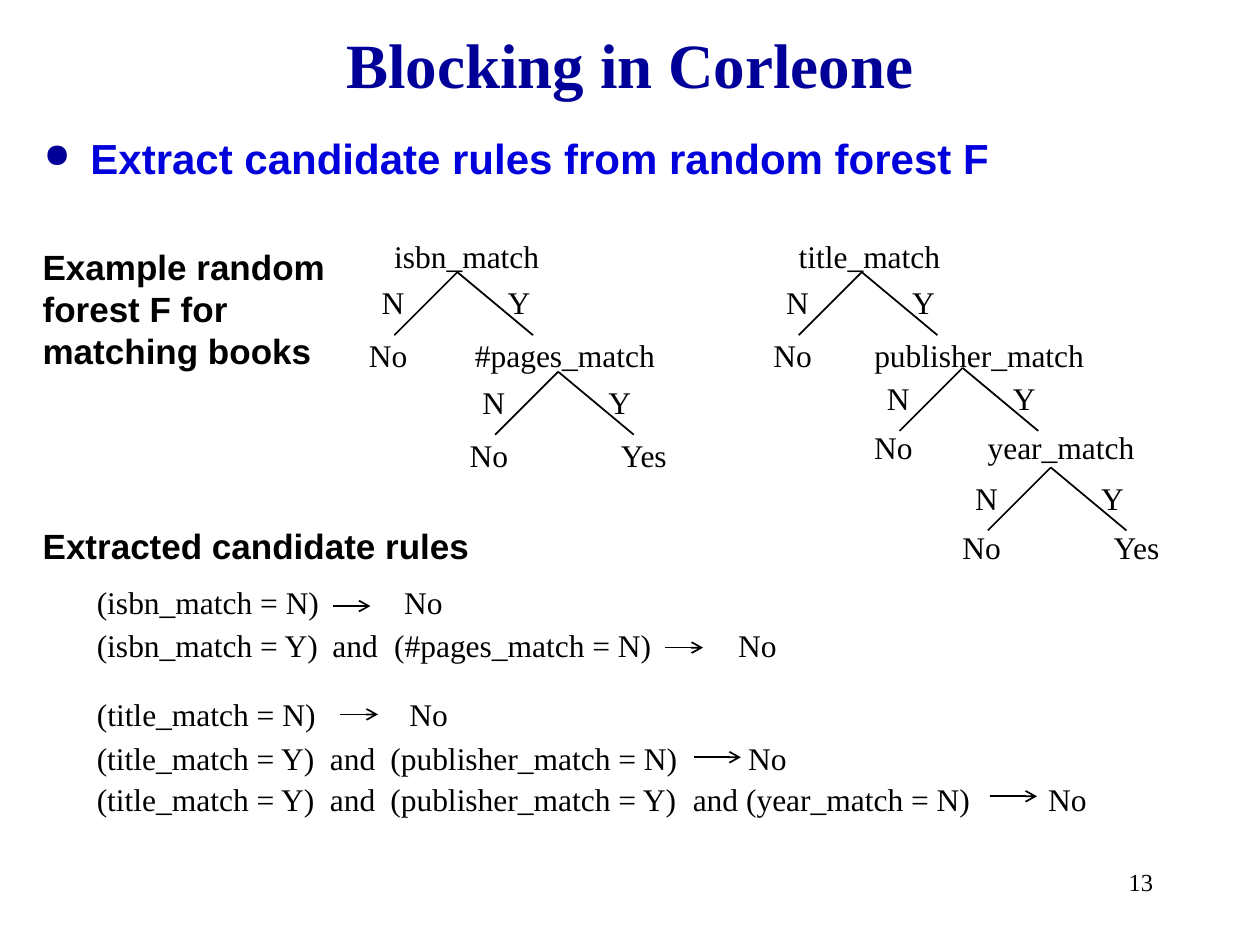
from collections import namedtuple

from lxml import etree
from pptx import Presentation
from pptx.dml.color import RGBColor
from pptx.enum.shapes import MSO_CONNECTOR
from pptx.enum.text import MSO_ANCHOR, PP_ALIGN
from pptx.oxml.ns import qn
from pptx.util import Inches, Pt

BLACK = RGBColor(0x00, 0x00, 0x00)
NAVY = RGBColor(0x00, 0x00, 0x99)
BLUE = RGBColor(0x00, 0x00, 0xDC)
SERIF, SANS = "Times New Roman", "Arial"

# A tree node: its label box, the apex of its two branches, the top of its children
Split = namedtuple("Split", "label left top width apex_x apex_y child_top")
ISBN_TREE = [
    Split("isbn_match", 3.03, 1.83, 1.4, 3.63, 2.16, 2.62),
    Split("#pages_match", 3.67, 2.62, 1.78, 4.43, 2.95, 3.41),
]
TITLE_TREE = [
    Split("title_match", 6.24, 1.83, 1.4, 6.84, 2.16, 2.62),
    Split("publisher_match", 6.84, 2.62, 1.99, 7.64, 2.92, 3.35),
    Split("year_match", 7.74, 3.35, 1.43, 8.34, 3.71, 4.14),
]

# A rule: its terms, the x where each term after the first starts, and its arrow
Rule = namedtuple("Rule", "top width terms term_xs arrow_x arrow_y arrow_length")
RULE_LEFT, INSET = 0.67, 0.1
RULES = [
    Rule(4.58, 3, ["(isbn_match = N)", "No"], [3.21], 2.64, 4.81, 0.3),
    Rule(4.92, 5.67, ["(isbn_match = Y)", "and", "(#pages_match = N)", "No"],
         [2.64, 3.13, 5.86], 5.28, 5.14, 0.3),
    Rule(5.47, 3.08, ["(title_match = N)", "No"], [3.25], 2.7, 5.67, 0.3),
    Rule(5.82, 6, ["(title_match = Y)", "and", "(publisher_match = N)", "No"],
         [2.62, 3.1, 5.94], 5.51, 6.01, 0.37),
    Rule(6.14, 8.17,
         ["(title_match = Y)", "and", "(publisher_match = Y)",
          "and (year_match = N)", "No"],
         [2.62, 3.1, 5.5, 8.32], 7.86, 6.32, 0.37),
]


def add_text(shapes, text, left, top, width, height=0.4, size=18, font=SERIF,
             color=BLACK, bold=False, align=PP_ALIGN.LEFT, wrap=True):
    """Add a text box; a newline in text starts a new line. Return its frame."""
    box = shapes.add_textbox(Inches(left), Inches(top), Inches(width), Inches(height))
    frame = box.text_frame
    frame.word_wrap = wrap
    paragraph = frame.paragraphs[0]
    paragraph.alignment = align
    for number, line in enumerate(text.split("\n")):
        if number:
            paragraph.add_line_break()
        run = paragraph.add_run()
        run.text = line
        run.font.size = Pt(size)
        run.font.name = font
        run.font.bold = bold
        run.font.color.rgb = color
    return frame


def add_line(shapes, x1, y1, x2, y2, arrow=False):
    line = shapes.add_connector(
        MSO_CONNECTOR.STRAIGHT, Inches(x1), Inches(y1), Inches(x2), Inches(y2))
    line.line.color.rgb = BLACK
    line.line.width = Pt(1)
    props = line._element.spPr
    if arrow:
        etree.SubElement(props.find(qn("a:ln")), qn("a:tailEnd"), type="arrow")
    etree.SubElement(props, qn("a:effectLst"))


def add_bullet(paragraph, indent):
    paragraph.space_before = Pt(4.8)
    props = paragraph._p.get_or_add_pPr()
    props.set("marL", str(Inches(indent)))
    props.set("indent", str(-Inches(indent)))
    color = etree.SubElement(props, qn("a:buClr"))
    etree.SubElement(color, qn("a:srgbClr"), val=str(NAVY))
    etree.SubElement(props, qn("a:buSzPct"), val="80000")
    etree.SubElement(props, qn("a:buChar"), char="●")


def add_tab_stops(paragraph, positions):
    tabs = etree.SubElement(paragraph._p.get_or_add_pPr(), qn("a:tabLst"))
    for position in positions:
        etree.SubElement(tabs, qn("a:tab"), pos=str(Inches(position)), algn="l")


def add_tree(slide, splits):
    """Draw a decision tree whose every N branch ends in No."""
    shapes = slide.shapes.add_group_shape().shapes
    for split in splits:
        x, y = split.apex_x, split.apex_y
        add_text(shapes, split.label, split.left, split.top, split.width)
        add_line(shapes, x, y, x - 0.5, y + 0.5)
        add_line(shapes, x, y, x + 0.6, y + 0.5)
        add_text(shapes, "N", x - 0.7, y + 0.04, 0.4)
        add_text(shapes, "Y", x + 0.3, y + 0.04, 0.4)
        add_text(shapes, "No", x - 0.8, split.child_top, 0.6)
    last = splits[-1]
    add_text(shapes, "Yes", last.apex_x + 0.4, last.child_top, 0.6)


def add_rule(slide, rule):
    frame = add_text(slide.shapes, "\t".join(rule.terms), RULE_LEFT, rule.top, rule.width)
    add_tab_stops(frame.paragraphs[0], [x - RULE_LEFT - INSET for x in rule.term_xs])
    add_line(slide.shapes, rule.arrow_x, rule.arrow_y,
             rule.arrow_x + rule.arrow_length, rule.arrow_y, arrow=True)


def main():
    prs = Presentation()
    prs.slide_width, prs.slide_height = Inches(10), Inches(7.5)
    slide = prs.slides.add_slide(prs.slide_layouts[6])
    shapes = slide.shapes

    title = add_text(shapes, "Blocking in Corleone", 0.75, 0.25, 8.5, 0.65, size=36,
                     color=NAVY, bold=True, align=PP_ALIGN.CENTER)
    title.vertical_anchor = MSO_ANCHOR.BOTTOM
    title.margin_top = title.margin_bottom = Inches(0.1)

    topic = add_text(shapes, "Extract candidate rules from random forest F",
                     0.25, 1, 9.5, 0.57, size=24, font=SANS, color=BLUE, bold=True)
    add_bullet(topic.paragraphs[0], 0.37)

    add_text(shapes, "Example random\nforest F for\nmatching books", 0.24, 1.9,
             2.54, 1.11, size=20, font=SANS, bold=True, wrap=False)
    for tree in (ISBN_TREE, TITLE_TREE):
        add_tree(slide, tree)

    add_text(shapes, "Extracted candidate rules", 0.24, 4.11, 3.61, 0.44, size=20,
             font=SANS, bold=True, wrap=False)
    for rule in RULES:
        add_rule(slide, rule)

    add_text(shapes, "13", 7.17, 6.83, 2.08, 0.5, size=14, align=PP_ALIGN.RIGHT)
    prs.save("out.pptx")


if __name__ == "__main__":
    main()
